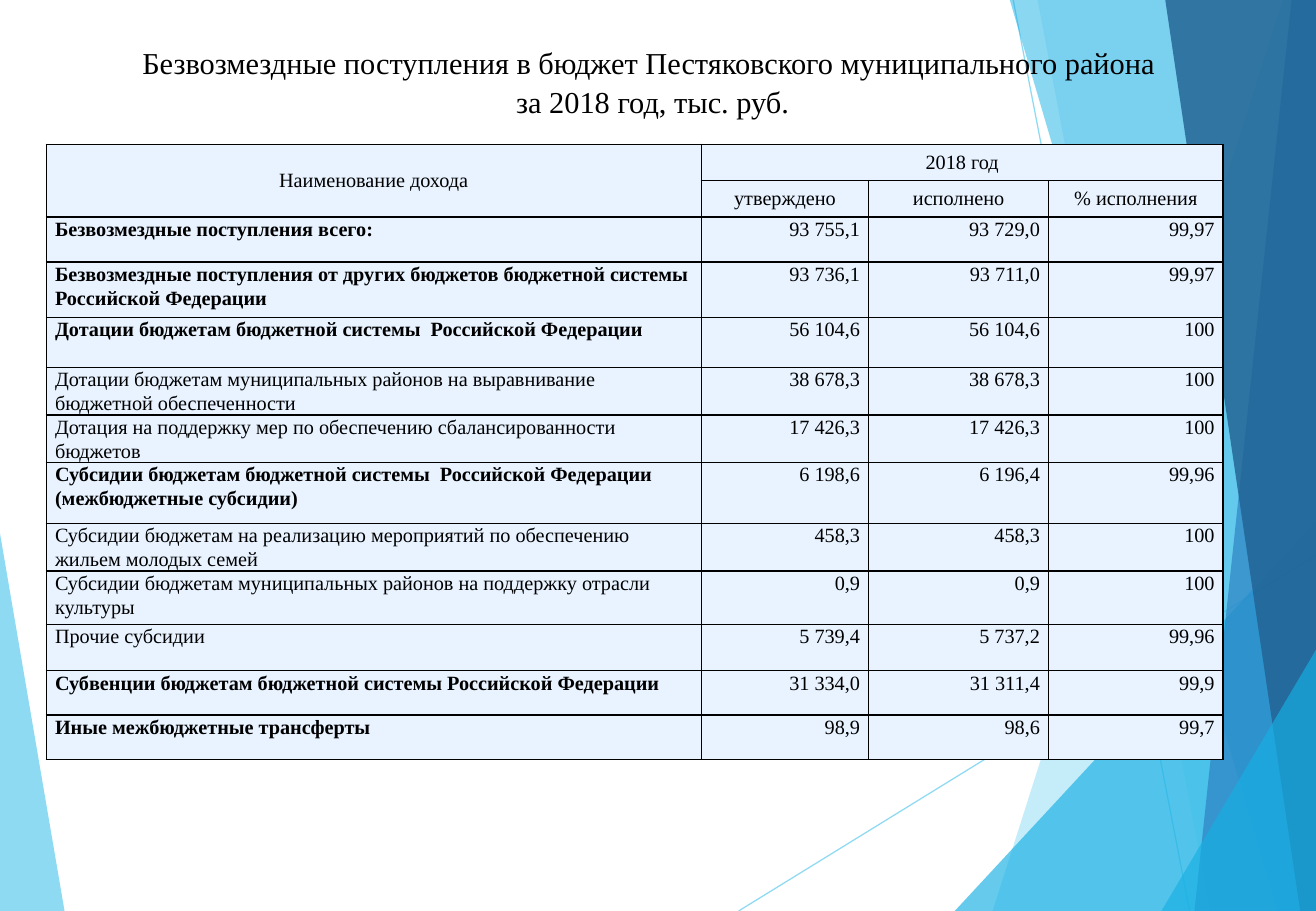
from lxml import etree
from pptx import Presentation
from pptx.dml.color import RGBColor
from pptx.enum.shapes import MSO_CONNECTOR
from pptx.enum.text import MSO_ANCHOR, MSO_AUTO_SIZE, PP_ALIGN
from pptx.oxml.ns import qn
from pptx.util import Cm, Pt

LEFT, CENTER, RIGHT = PP_ALIGN.LEFT, PP_ALIGN.CENTER, PP_ALIGN.RIGHT
TOP, MIDDLE = MSO_ANCHOR.TOP, MSO_ANCHOR.MIDDLE
STRAIGHT = MSO_CONNECTOR.STRAIGHT
NO_FIT = MSO_AUTO_SIZE.NONE

WIDTH, HEIGHT = 27.51, 19.05
FONT = "Times New Roman"
BLACK, PALE = "000000", "E8F3FF"
SKY, CYAN, BLUE, NAVY = "5FCBEF", "17B0E4", "2E83C3", "226292"

TITLE = ("Безвозмездные поступления в бюджет Пестяковского муниципального района \v"
         "за 2018 год, тыс. руб.")
HEADS = ["утверждено", "исполнено", "% исполнения"]
# Bold flag, row height in cm, name, three values
ROWS = [
    (True, 0.94, "Безвозмездные поступления всего:", "93 755,1", "93 729,0", "99,97"),
    (True, 1.16, "Безвозмездные поступления от других бюджетов бюджетной системы "
     "Российской Федерации", "93 736,1", "93 711,0", "99,97"),
    (True, 1.04, "Дотации бюджетам бюджетной системы  Российской Федерации",
     "56 104,6", "56 104,6", "100"),
    (False, 0.99, "Дотации бюджетам муниципальных районов нa выравнивание "
     "бюджетной обеспеченности", "38 678,3", "38 678,3", "100"),
    (False, 0.99, "Дотация на поддержку мер по обеспечению сбалансированности "
     "бюджетов", "17 426,3", "17 426,3", "100"),
    (True, 1.27, "Субсидии бюджетам бюджетной системы  Российской Федерации "
     "(межбюджетные субсидии)", "6 198,6", "6 196,4", "99,96"),
    (False, 1.0, "Субсидии бюджетам на реализацию мероприятий по обеспечению "
     "жильем молодых семей", "458,3", "458,3", "100"),
    (False, 1.11, "Субсидии бюджетам муниципальных районов на поддержку отрасли "
     "культуры", "0,9", "0,9", "100"),
    (False, 0.97, "Прочие субсидии", "5 739,4", "5 737,2", "99,96"),
    (True, 0.93, "Субвенции бюджетам бюджетной системы Российской Федерации",
     "31 334,0", "31 311,4", "99,9"),
    (True, 0.93, "Иные межбюджетные трансферты", "98,9", "98,6", "99,7"),
]
HEAD_H = 0.76
COLS = [13.69, 3.5, 3.76, 3.65]

# Facets on the right edge: top x, top y, bottom x, colour, opacity
FACETS = [
    (26.82, 0, 20.75, SKY, 36),
    (21.69, 0, 25.3, SKY, 20),
    (WIDTH, 10.9, 19.96, CYAN, 66),
    (21.11, 0, 26.7, CYAN, 50),
    (27, 0, 24.97, BLUE, 70),
    (24.36, 0, 27.18, NAVY, 82),
    (WIDTH, 13.59, 24.28, CYAN, 66),
]
RAYS = [((15.44, HEIGHT), (WIDTH, 11.61)), ((21.18, 0), (24.87, HEIGHT))]


def paint(fill, color, alpha=100):
    """Solid colour from a hex string, with opacity in percent."""
    fill.solid()
    fill.fore_color.rgb = RGBColor.from_string(color)
    if alpha < 100:
        node = fill._xPr.find(".//" + qn("a:srgbClr"))
        etree.SubElement(node, qn("a:alpha"), val=str(alpha * 1000))


def style(para, size, align, bold=False, space=None):
    para.alignment = align
    para.line_spacing = space
    for run in para.runs:
        run.font.name = FONT
        run.font.size = Pt(size)
        run.font.bold = bold
        paint(run.font.fill, BLACK)


def draw_facet(slide, box, points, color, alpha):
    left, top = box[:2]
    dots = [(Cm(left + x), Cm(top + y)) for x, y in points]
    pen = slide.shapes.build_freeform(*dots[0], scale=1.0)
    pen.add_line_segments(dots[1:], close=True)
    facet = pen.convert_to_shape()
    facet.shadow.inherit = False
    paint(facet.fill, color, alpha)
    facet.line.fill.background()


def add_decor(slide, box):
    left, top, width, height = box
    # Left wedge
    draw_facet(slide, box, [(0, 11.15), (1.35, height), (0, height)], SKY, 70)
    # Thin rays
    for (x1, y1), (x2, y2) in RAYS:
        ray = slide.shapes.add_connector(
            STRAIGHT, Cm(left + x1), Cm(top + y1), Cm(left + x2), Cm(top + y2))
        paint(ray.line.fill, SKY, 70)
        ray.line.width = Pt(0.75)
        etree.SubElement(ray.element.spPr, qn("a:effectLst"))
    # Right facets
    for x, y, foot, color, alpha in FACETS:
        points = [(x, y), (foot, height), (width, height)]
        if x < width:
            points.append((width, y))
        draw_facet(slide, box, points, color, alpha)


def add_title(slide, box):
    title = slide.shapes.title
    title.left, title.top, title.width, title.height = map(Cm, box)
    frame = title.text_frame
    frame.text = TITLE
    frame.word_wrap = True
    frame.auto_size = NO_FIT
    frame.vertical_anchor = TOP
    style(frame.paragraphs[0], 18, CENTER, space=1.06)
    # Bring the title in front of the facets
    title.element.getparent().append(title.element)


def add_border(cell):
    props = cell._tc.get_or_add_tcPr()
    for i, side in enumerate(("lnL", "lnR", "lnT", "lnB")):
        line = etree.Element(qn("a:" + side), w=str(Pt(1)))
        fill = etree.SubElement(line, qn("a:solidFill"))
        etree.SubElement(fill, qn("a:srgbClr"), val=BLACK)
        props.insert(i, line)


def fill_cell(cell, text, align, head=False, bold=False):
    cell.text = text
    cell.margin_left = cell.margin_right = Cm(0.05 if head else 0.18)
    cell.margin_top = cell.margin_bottom = 0
    cell.vertical_anchor = MIDDLE if head else TOP
    style(cell.text_frame.paragraphs[0], 12, align, bold, None if head else 1.06)


def add_income(slide, box):
    frame = slide.shapes.add_table(len(ROWS) + 2, len(COLS), *map(Cm, box))
    table = frame.table
    table.first_row = table.horz_banding = False
    for col, width in zip(table.columns, COLS):
        col.width = Cm(width)
    heights = [HEAD_H, HEAD_H] + [row[1] for row in ROWS]
    for row, height in zip(table.rows, heights):
        row.height = Cm(height)
    for cell in table.iter_cells():
        paint(cell.fill, PALE)
        add_border(cell)
    # Heading rows
    table.cell(0, 0).merge(table.cell(1, 0))
    table.cell(0, 1).merge(table.cell(0, 3))
    fill_cell(table.cell(0, 0), "Наименование дохода", CENTER, head=True)
    fill_cell(table.cell(0, 1), "2018 год", CENTER, head=True)
    for c, text in enumerate(HEADS, 1):
        fill_cell(table.cell(1, c), text, CENTER, head=True)
    # Income rows
    for r, (bold, _, name, *values) in enumerate(ROWS, 2):
        fill_cell(table.cell(r, 0), name, LEFT, bold=bold)
        for c, value in enumerate(values, 1):
            fill_cell(table.cell(r, c), value, RIGHT)


def main():
    deck = Presentation()
    deck.slide_width, deck.slide_height = Cm(WIDTH), Cm(HEIGHT)
    slide = deck.slides.add_slide(deck.slide_layouts[5])
    add_decor(slide, (0, 0, WIDTH, HEIGHT))
    add_title(slide, (0.46, 0.76, 26.37, 3.15))
    add_income(slide, (0.97, 3.02, sum(COLS), 2 * HEAD_H + sum(row[1] for row in ROWS)))
    deck.save("out.pptx")


if __name__ == "__main__":
    main()
